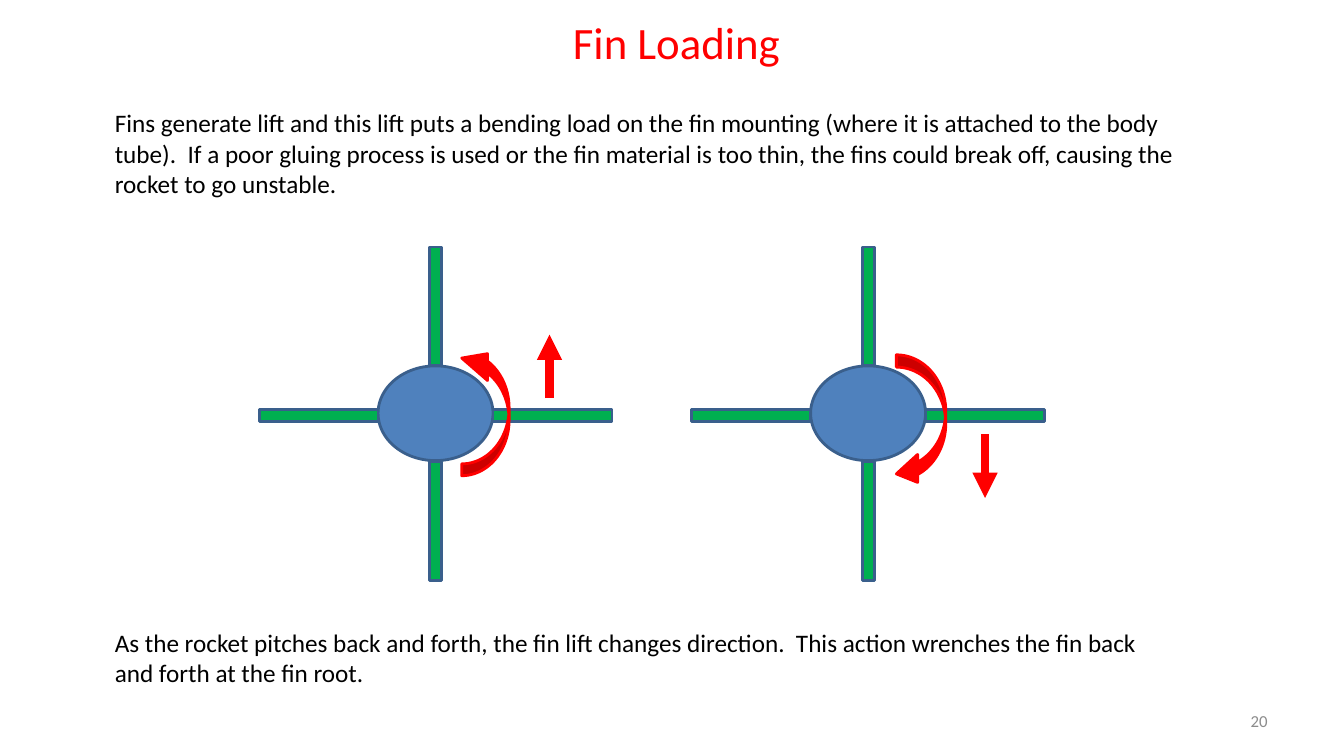
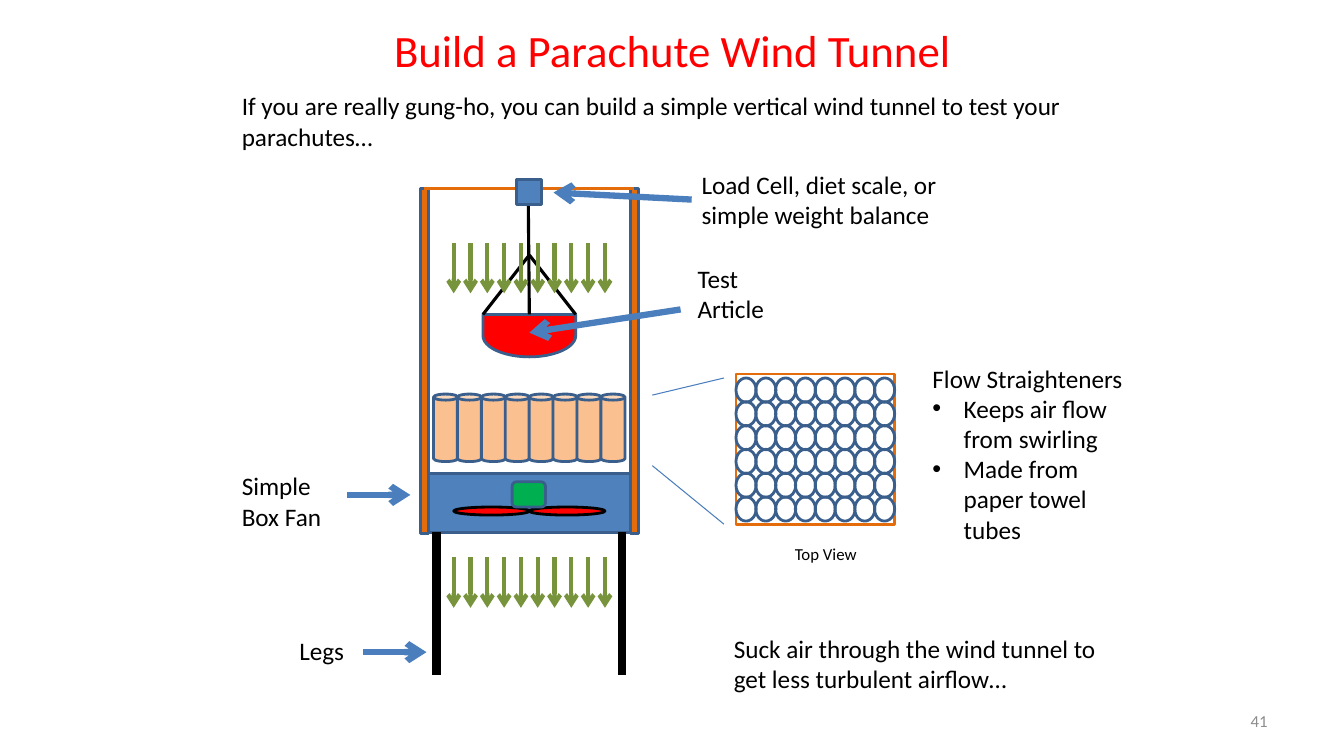
from lxml import etree
from pptx import Presentation
from pptx.dml.color import RGBColor
from pptx.enum.shapes import MSO_CONNECTOR, MSO_SHAPE
from pptx.enum.text import MSO_ANCHOR, PP_ALIGN
from pptx.oxml.ns import qn
from pptx.util import Inches, Pt

RECTANGLE = MSO_SHAPE.RECTANGLE
ROUNDED = MSO_SHAPE.ROUNDED_RECTANGLE
ELLIPSE = MSO_SHAPE.OVAL
CAN = MSO_SHAPE.CAN
DELAY = MSO_SHAPE.FLOWCHART_DELAY
CURVED_ARROW = MSO_SHAPE.CURVED_LEFT_ARROW
STRAIGHT = MSO_CONNECTOR.STRAIGHT
LEFT, CENTER, RIGHT = PP_ALIGN.LEFT, PP_ALIGN.CENTER, PP_ALIGN.RIGHT
TOP, MIDDLE = MSO_ANCHOR.TOP, MSO_ANCHOR.MIDDLE

FONT = "Calibri"
BLACK, RED, GRAY = "000000", "FF0000", "8C8C8C"
BLUE, OUTLINE, POINTER = "4F81BD", "3A5F8C", "4B7EBC"
GREEN, AIRFLOW = "00B050", "77933C"
ORANGE, CARDBOARD = "E46C0A", "FAC090"


def rgb(color):
    return RGBColor.from_string(color)


def format_paragraph(paragraph, size, color, align):
    paragraph.alignment = align
    paragraph.font.name = FONT
    paragraph.font.size = Pt(size)
    paragraph.font.color.rgb = rgb(color)


def place(shape, left, top, width, height):
    shape.left, shape.top = Inches(left), Inches(top)
    shape.width, shape.height = Inches(width), Inches(height)


def add_bullet(paragraph, indent=0.31):
    properties = paragraph._p.get_or_add_pPr()
    properties.set("marL", str(Inches(indent)))
    properties.set("indent", str(-Inches(indent)))
    etree.SubElement(properties, qn("a:buFont")).set("typeface", "Arial")
    etree.SubElement(properties, qn("a:buChar")).set("char", "•")


def add_text(slide, text, left, top, width, height, size=18, color=BLACK,
             align=LEFT, anchor=TOP, bullets=()):
    box = slide.shapes.add_textbox(Inches(left), Inches(top),
                                   Inches(width), Inches(height))
    frame = box.text_frame
    frame.word_wrap = True
    frame.vertical_anchor = anchor
    frame.text = text
    for bullet in bullets:
        paragraph = frame.add_paragraph()
        paragraph.text = bullet
        add_bullet(paragraph)
    for paragraph in frame.paragraphs:
        format_paragraph(paragraph, size, color, align)


def add_shape(slide, kind, left, top, width, height, fill=None,
              outline=OUTLINE, rotation=0):
    shape = slide.shapes.add_shape(kind, Inches(left), Inches(top),
                                   Inches(width), Inches(height))
    shape.shadow.inherit = False
    shape.rotation = rotation
    if fill:
        shape.fill.solid()
        shape.fill.fore_color.rgb = rgb(fill)
    else:
        shape.fill.background()
    shape.line.color.rgb = rgb(outline)
    shape.line.width = Pt(2)
    return shape


def add_line(slide, start, end, color, width, arrowhead=None):
    line = slide.shapes.add_connector(STRAIGHT, *map(Inches, start + end))
    line.line.color.rgb = rgb(color)
    line.line.width = Pt(width)
    properties = line._element.spPr
    if arrowhead:
        outline = properties.find(qn("a:ln"))
        etree.SubElement(outline, qn("a:tailEnd")).set("type", arrowhead)
    etree.SubElement(properties, qn("a:effectLst"))


def add_titled_slide(presentation, title, top, left, height, number):
    slide = presentation.slides.add_slide(presentation.slide_layouts[5])
    placeholder = slide.shapes.title
    place(placeholder, left, top, 9, height)
    frame = placeholder.text_frame
    frame.text = title
    frame.vertical_anchor = MIDDLE
    format_paragraph(frame.paragraphs[0], 32, RED, CENTER)
    add_text(slide, number, 9.56, 6.95, 3.11, 0.4, 12, GRAY, RIGHT, MIDDLE)
    return slide


def add_rocket(slide, left):
    """Draw the body tube seen from its end, with four fins around it."""
    add_shape(slide, ELLIPSE, left + 1.18, 3.63, 1.14, 0.94, BLUE)
    for offset, top, rotation in ((2.32, 4.06, 0), (0, 4.06, 0),
                                  (1.16, 5.11, 90), (1.16, 2.98, 90)):
        add_shape(slide, RECTANGLE, left + offset, top, 1.18, 0.12,
                  GREEN, rotation=rotation)


def add_moment(slide, left, top, width, height, head, upward=False):
    arrow = add_shape(slide, CURVED_ARROW, left, top, width, height, RED, RED)
    for index, value in enumerate((0.25, 0.566, head)):
        arrow.adjustments[index] = value
    if upward:
        arrow._element.spPr.xfrm.set("flipV", "1")


def add_airflow(slide, top):
    for index in range(10):
        x = 4.5 + index / 6
        add_line(slide, (x, top), (x, top + 0.5), AIRFLOW, 3, "arrow")


def add_fan(slide):
    add_shape(slide, RECTANGLE, 4.25, 4.7, 2, 0.58, BLUE)
    for left in (5.25, 4.5):
        add_shape(slide, ELLIPSE, left, 5.03, 0.75, 0.08, RED, BLACK)
    add_shape(slide, ROUNDED, 5.08, 4.78, 0.33, 0.25, GREEN)


def add_frame(slide):
    for left in (4.17, 6.25):
        add_shape(slide, RECTANGLE, left, 1.87, 0.08, 3.42, ORANGE)
    add_line(slide, (4.21, 1.87), (6.29, 1.87), ORANGE, 2.25)
    for x in (4.33, 6.17):
        add_line(slide, (x, 5.28), (x, 6.7), BLACK, 6)


def add_parachute(slide):
    add_shape(slide, DELAY, 5.04, 2.87, 0.42, 0.92, RED, rotation=90)
    for start, end in (((4.79, 3.12), (5.25, 2.53)),
                       ((5.25, 3.12), (5.24, 2.03)),
                       ((5.71, 3.12), (5.25, 2.53))):
        add_line(slide, start, end, BLACK, 2.25)
    add_shape(slide, RECTANGLE, 5.12, 1.78, 0.25, 0.25, BLUE)


def add_straighteners(slide):
    """Draw the tubes from the side and, enlarged, from the top."""
    columns, rows = 8, 6
    for column in range(columns):
        add_shape(slide, CAN, 4.3 + column * 1.66 / 7, 3.91, 0.24, 0.67,
                  CARDBOARD)
    left, width = 7.3, 1.57
    add_shape(slide, RECTANGLE, left, 3.71, width, 1.49, outline=ORANGE)
    pitch = width / columns
    for row in range(rows):
        for column in range(columns):
            add_shape(slide, ELLIPSE, left + column * pitch,
                      3.75 + row * 1.18 / 5, 0.2, 0.24)
    add_line(slide, (6.47, 3.92), (7.18, 3.75), POINTER, 0.75)
    add_line(slide, (6.47, 4.62), (7.18, 5.2), POINTER, 0.75)


def build_fin_loading(presentation):
    slide = add_titled_slide(presentation, "Fin Loading",
                             0.08, 2.21, 0.67, "20")
    add_text(slide, "Fins generate lift and this lift puts a bending load on "
             "the fin mounting (where it is attached to the body tube).  If a "
             "poor gluing process is used or the fin material is too thin, "
             "the fins could break off, causing the rocket to go unstable.",
             1.04, 1.02, 11.02, 1.01)
    for left in (2.57, 6.86):
        add_rocket(slide, left)
    add_line(slide, (5.45, 3.95), (5.45, 3.32), RED, 6, "triangle")
    add_moment(slide, 4.58, 3.42, 0.47, 1.3, 0.544, upward=True)
    add_line(slide, (9.77, 4.31), (9.77, 4.94), RED, 6, "triangle")
    add_moment(slide, 8.89, 3.52, 0.49, 1.32, 0.43)
    add_text(slide, "As the rocket pitches back and forth, the fin lift "
             "changes direction.  This action wrenches the fin back and "
             "forth at the fin root.", 1.04, 6.17, 10.63, 0.71)


def build_wind_tunnel(presentation):
    slide = add_titled_slide(presentation, "Build a Parachute Wind Tunnel",
                             0.14, 2.17, 0.7, "41")
    add_text(slide, "If you are really gung-ho, you can build a simple "
             "vertical wind tunnel to test your parachutes…",
             2.3, 0.85, 8.74, 0.71)
    add_fan(slide)
    add_frame(slide)
    add_parachute(slide)
    add_straighteners(slide)
    for top in (2.41, 5.53):
        add_airflow(slide, top)

    labels = (
        ("Load Cell, diet scale, or simple weight balance", 6.86, 1.63, 2.92),
        ("Test Article", 6.82, 2.56, 1.14),
        ("Simple Box Fan", 2.3, 4.62, 1.14),
        ("Legs", 2.87, 6.25, 1.14),
        ("Suck air through the wind tunnel to get less turbulent airflow…",
         7.18, 6.23, 3.86),
    )
    for text, left, top, width in labels:
        add_text(slide, text, left, top, width, 0.71)
    add_text(slide, "Flow Straighteners", 9.15, 3.55, 2.13, 1.92,
             bullets=("Keeps air flow from swirling",
                      "Made from paper towel tubes"))
    add_text(slide, "Top View", 7.7, 5.35, 0.98, 0.3, 12, align=CENTER)

    pointers = (
        ((6.86, 1.98), (5.49, 1.91)),
        ((6.75, 3.07), (5.25, 3.3)),
        ((3.44, 4.91), (4.07, 4.91)),
        ((3.6, 6.47), (4.23, 6.47)),
    )
    for start, end in pointers:
        add_line(slide, start, end, POINTER, 4.5, "arrow")


def main():
    presentation = Presentation()
    presentation.slide_width = Inches(13.33)
    presentation.slide_height = Inches(7.5)
    build_fin_loading(presentation)
    build_wind_tunnel(presentation)
    presentation.save("out.pptx")


if __name__ == "__main__":
    main()
